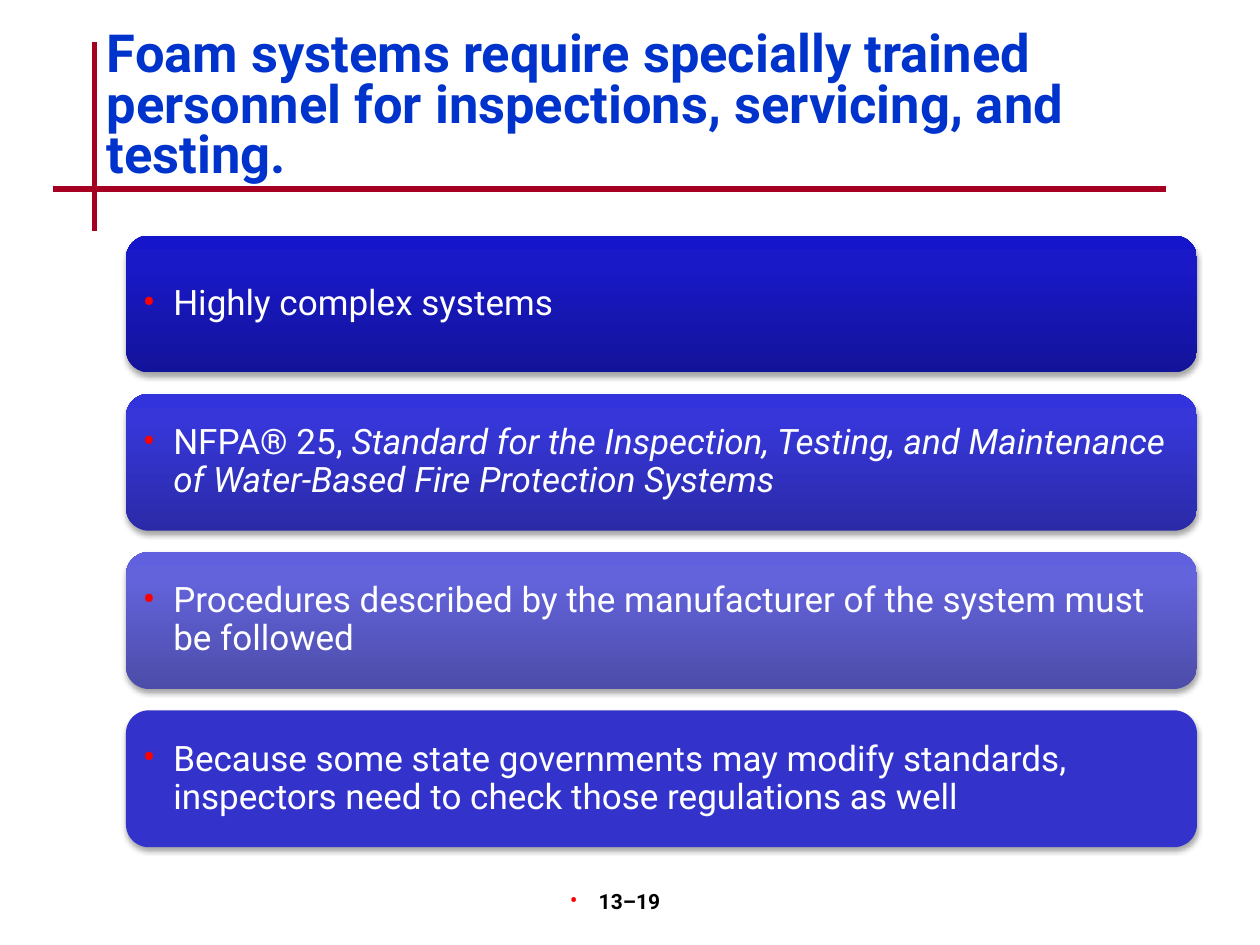
import pptx
import pptx.dml.color
import pptx.enum.shapes
import pptx.enum.text
import pptx.oxml
import pptx.oxml.ns
import pptx.util
from dataclasses import dataclass

Cm = pptx.util.Cm
Shape = pptx.enum.shapes.MSO_SHAPE
Anchor = pptx.enum.text.MSO_ANCHOR
Align = pptx.enum.text.PP_ALIGN
NS = pptx.oxml.ns.nsdecls("a")

HUES = {
    "rule": "A50021",
    "title": "0033CC",
    "dot": "FF0000",
    "white": "FFFFFF",
    "black": "000000",
    "plain": "3333CC",
}
FONT = "Roboto"
LEFT, TOP, WIDE, HIGH, STEP = 2.54, 4.75, 21.59, 2.76, 3.19


@dataclass
class Card:
    text: str
    slant: str = ""
    stops: tuple = ()


CARDS = [
    Card("Highly complex systems", stops=("13139A", "1919C8", "1515CC")),
    Card("NFPA® 25, ",
         "Standard for the Inspection, Testing, and Maintenance of "
         "Water-Based Fire Protection Systems",
         ("2A2AA7", "3636D9", "3333DD")),
    Card("Procedures described by the manufacturer of the system must be followed",
         stops=("4C4CA9", "6363DB", "6161DF")),
    Card("Because some state governments may modify standards, inspectors "
         "need to check those regulations as well"),
]


def tint(name: str):
    return pptx.dml.color.RGBColor.from_string(HUES[name])


def write(par, text: str, *, size: float, hue: str,
          bold: bool = False, slant: bool = False) -> None:
    run = par.add_run()
    run.text = text
    font = run.font
    font.name, font.size = FONT, pptx.util.Pt(size)
    font.bold, font.italic = bold, slant
    font.color.rgb = tint(hue)


def add_dot(par, gap: float) -> None:
    props = par._p.get_or_add_pPr()
    props.set("marL", str(Cm(gap)))
    props.set("indent", str(-Cm(gap)))
    for part in (
        f'<a:buClr {NS}><a:srgbClr val="{HUES["dot"]}"/></a:buClr>',
        f'<a:buSzPct {NS} val="110000"/>',
        f'<a:buFont {NS} typeface="{FONT}"/>',
        f'<a:buChar {NS} char="•"/>',
    ):
        props.append(pptx.oxml.parse_xml(part))


def add_rule(slide, x1: float, y1: float, x2: float, y2: float) -> None:
    rule = slide.shapes.add_connector(
        pptx.enum.shapes.MSO_CONNECTOR.STRAIGHT, Cm(x1), Cm(y1), Cm(x2), Cm(y2))
    rule.line.width = pptx.util.Pt(3)
    rule.line.color.rgb = tint("rule")
    rule._element.spPr.append(pptx.oxml.parse_xml(f"<a:effectLst {NS}/>"))


def paint(box, stops: tuple) -> None:
    box.line.fill.background()
    if stops:
        marks = "".join(
            f'<a:gs pos="{spot}"><a:srgbClr val="{hue}"/></a:gs>'
            for spot, hue in zip((0, 80000, 100000), stops))
        box._element.spPr.insert(2, pptx.oxml.parse_xml(
            f'<a:gradFill {NS} rotWithShape="1"><a:gsLst>{marks}</a:gsLst>'
            f'<a:lin ang="16200000" scaled="0"/></a:gradFill>'))
    else:
        box.fill.solid()
        box.fill.fore_color.rgb = tint("plain")
    box._element.spPr.append(pptx.oxml.parse_xml(
        f'<a:effectLst {NS}><a:outerShdw blurRad="{pptx.util.Pt(3.1)}" '
        f'dist="{pptx.util.Pt(1.8)}" dir="5400000" rotWithShape="0">'
        f'<a:srgbClr val="{HUES["black"]}"><a:alpha val="35000"/></a:srgbClr>'
        f'</a:outerShdw></a:effectLst>'))


def add_card(slide, card: Card, top: float) -> None:
    box = slide.shapes.add_shape(
        Shape.ROUNDED_RECTANGLE, Cm(LEFT), Cm(top), Cm(WIDE), Cm(HIGH))
    paint(box, card.stops)
    frame = box.text_frame
    frame.word_wrap = True
    frame.vertical_anchor = Anchor.MIDDLE
    frame.margin_left = frame.margin_right = Cm(0.2)
    frame.margin_top = frame.margin_bottom = Cm(0.2)
    par = frame.paragraphs[0]
    par.alignment, par.line_spacing = Align.LEFT, 0.9
    add_dot(par, 0.62)
    write(par, card.text, size=20, hue="white")
    if card.slant:
        write(par, card.slant, size=20, hue="white", slant=True)


def add_title(slide, text: str) -> None:
    title = slide.shapes.title
    title.left, title.top = Cm(1.9), Cm(0.53)
    title.width, title.height = Cm(22.02), Cm(2.54)
    frame = title.text_frame
    frame.word_wrap = True
    frame.auto_size = pptx.enum.text.MSO_AUTO_SIZE.NONE
    frame.vertical_anchor = Anchor.TOP
    par = frame.paragraphs[0]
    par.alignment, par.line_spacing = Align.LEFT, 0.8
    write(par, text, size=30, hue="title", bold=True)


def add_page(slide, text: str) -> None:
    box = slide.shapes.add_textbox(Cm(9.96), Cm(17.78), Cm(5.28), Cm(1.27))
    frame = box.text_frame
    frame.word_wrap = True
    frame.margin_right = Cm(0.65)
    par = frame.paragraphs[0]
    par.alignment = Align.CENTER
    add_dot(par, 0.58)
    write(par, text, size=12, hue="black", bold=True)


def main() -> None:
    deck = pptx.Presentation()
    deck.slide_width, deck.slide_height = Cm(25.4), Cm(19.05)
    slide = deck.slides.add_slide(deck.slide_layouts.get_by_name("Title Only"))
    add_rule(slide, 1.9, 0.85, 1.9, 4.66)
    add_rule(slide, 1.06, 3.81, 23.5, 3.81)
    add_page(slide, "13–19")
    add_title(slide, "Foam systems require specially trained personnel for "
                     "inspections, servicing, and testing.")
    for rank, card in enumerate(CARDS):
        add_card(slide, card, TOP + rank * STEP)
    deck.save("out.pptx")


if __name__ == "__main__":
    main()
